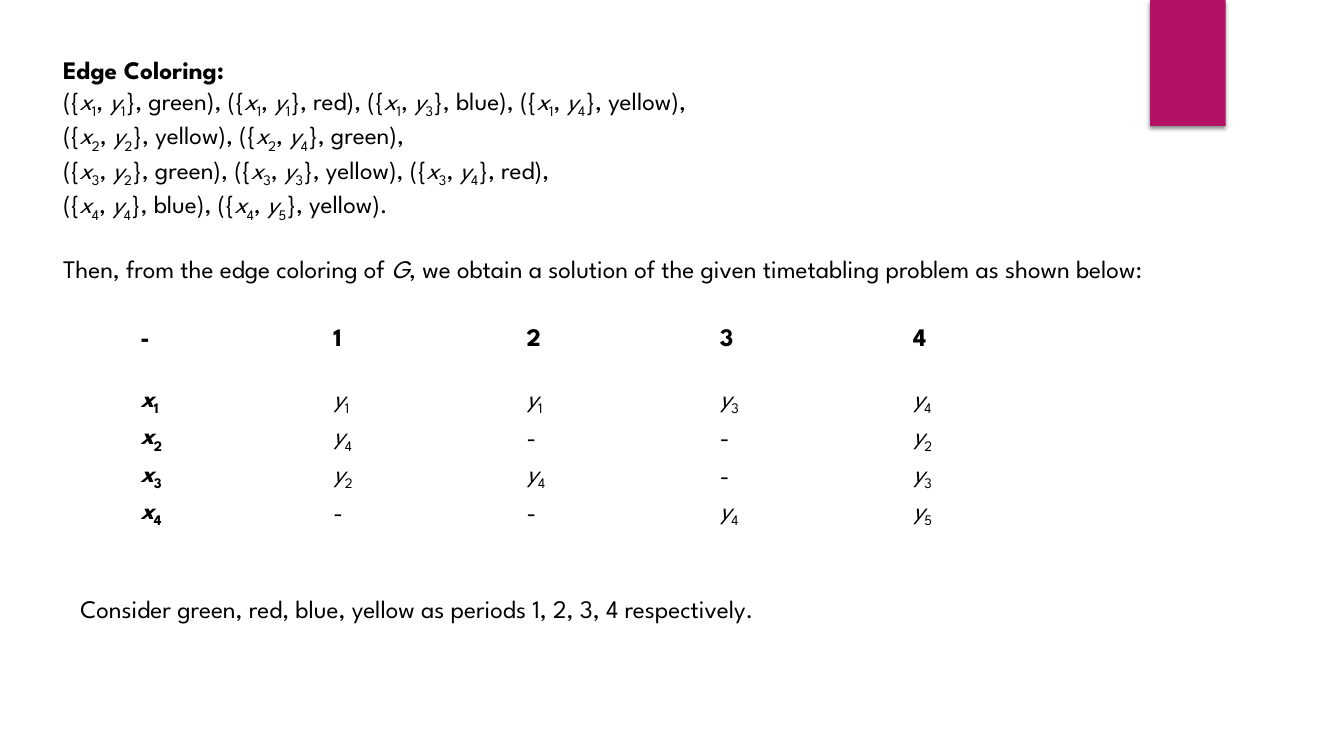
"""Build the edge coloring slide with its timetable."""
from itertools import cycle

from lxml import etree
from pptx import Presentation
from pptx.dml.color import RGBColor
from pptx.enum import shapes, text
from pptx.oxml import ns
from pptx.util import Pt

BLACK = RGBColor(0, 0, 0)
WHITE = RGBColor(255, 255, 255)
MAGENTA = RGBColor(0xB3, 0x11, 0x66)

PERIODS = ["green", "red", "blue", "yellow"]
COLORING = {
    1: [(1, "green"), (1, "red"), (3, "blue"), (4, "yellow")],
    2: [(2, "yellow"), (4, "green")],
    3: [(2, "green"), (3, "yellow"), (4, "red")],
    4: [(4, "blue"), (5, "yellow")],
}


class SlideBuilder:
    """Adds styled elements to one slide, with lengths in points."""

    font_name = "League Spartan"
    font_size = 18

    def __init__(self, slide):
        self.slide = slide

    def add_runs(self, paragraph, markup, bold=False):
        """Set parts split by bars as roman, italic, subscript in turn."""
        for part, kind in zip(markup.split("|"), cycle(("roman", "italic", "sub"))):
            if not part:
                continue
            run = paragraph.add_run()
            run.text = part
            run.font.name = self.font_name
            run.font.size = Pt(self.font_size)
            run.font.color.rgb = BLACK
            run.font.bold = bold
            run.font.italic = kind == "italic"
            if kind == "sub":
                run._r.get_or_add_rPr().set("baseline", "-25000")

    def place(self, shape, left, top, width, height):
        """Position a shape and prepare its text frame."""
        shape.left, shape.top = Pt(left), Pt(top)
        shape.width, shape.height = Pt(width), Pt(height)
        frame = shape.text_frame
        frame.word_wrap = True
        frame.auto_size = text.MSO_AUTO_SIZE.NONE
        frame.vertical_anchor = text.MSO_ANCHOR.TOP
        frame.margin_left = frame.margin_right = 0
        frame.margin_top = frame.margin_bottom = 0
        return frame

    def title(self, markup, *box):
        """Fill the title placeholder."""
        paragraph = self.place(self.slide.shapes.title, *box).paragraphs[0]
        paragraph.alignment = text.PP_ALIGN.LEFT
        self.add_runs(paragraph, markup, bold=True)

    def body(self, lines, closing, gap, *box):
        """Fill the body placeholder with lines and a spaced closing line."""
        frame = self.place(self.slide.placeholders[1], *box)
        for index, line in enumerate([*lines, closing]):
            paragraph = frame.add_paragraph() if index else frame.paragraphs[0]
            properties = paragraph._p.get_or_add_pPr()
            properties.set("marL", "0")
            properties.set("indent", "0")
            etree.SubElement(properties, ns.qn("a:buNone"))
            paragraph.space_before = Pt(gap if index == len(lines) else 0)
            self.add_runs(paragraph, line)

    def note(self, markup, *box):
        """Add a text box with one line."""
        note = self.slide.shapes.add_textbox(0, 0, 0, 0)
        self.add_runs(self.place(note, *box).paragraphs[0], markup)

    def ribbon(self, left, top, width, height):
        """Add the accent bar with its soft shadow."""
        ribbon = self.slide.shapes.add_shape(
            shapes.MSO_SHAPE.RECTANGLE, Pt(left), Pt(top), Pt(width), Pt(height))
        ribbon.fill.solid()
        ribbon.fill.fore_color.rgb = MAGENTA
        ribbon.line.fill.background()
        ribbon.shadow.inherit = False
        effects = ribbon._element.spPr.find(ns.qn("a:effectLst"))
        shadow = etree.SubElement(effects, ns.qn("a:outerShdw"), blurRad=str(Pt(3)),
                                  dist=str(Pt(2)), dir="5400000", rotWithShape="0")
        color = etree.SubElement(shadow, ns.qn("a:srgbClr"), val="000000")
        etree.SubElement(color, ns.qn("a:alpha"), val="45000")

    def timetable(self, rows, left, top, column_width, header_height, row_height):
        """Add a plain table with a bold first row and column."""
        width = column_width * len(rows[0])
        height = header_height + row_height * (len(rows) - 1)
        table = self.slide.shapes.add_table(
            len(rows), len(rows[0]), Pt(left), Pt(top), Pt(width), Pt(height)).table
        table.first_row = table.horz_banding = False
        for column in table.columns:
            column.width = Pt(column_width)
        for r, row in enumerate(rows):
            table.rows[r].height = Pt(row_height if r else header_height)
            for c, markup in enumerate(row):
                cell = table.cell(r, c)
                cell.fill.solid()
                cell.fill.fore_color.rgb = WHITE
                cell.vertical_anchor = text.MSO_ANCHOR.MIDDLE
                self.add_runs(cell.text_frame.paragraphs[0], markup, bold=r == 0 or c == 0)


def coloring_lines():
    """List the colored edges, one line for each x."""
    lines = [", ".join(f"({{|x|{x}|, |y|{y}|}}, {color})" for y, color in edges)
             for x, edges in COLORING.items()]
    return [line + "," for line in lines[:-1]] + [lines[-1] + "."]


def timetable_rows():
    """Arrange the colored edges by period."""
    rows = [["-", *(str(n) for n in range(1, len(PERIODS) + 1))]]
    for x, edges in COLORING.items():
        lessons = {color: f"|y|{y}" for y, color in edges}
        rows.append([f"|x|{x}", *(lessons.get(period, "-") for period in PERIODS)])
    return rows


def main():
    """Build and save the slide."""
    deck = Presentation()
    deck.slide_width, deck.slide_height = Pt(960), Pt(540)
    builder = SlideBuilder(deck.slides.add_slide(deck.slide_layouts[1]))
    builder.ribbon(821.5, 0, 54, 90)
    builder.title("Edge Coloring:", 45, 39, 780, 22)
    builder.body(
        coloring_lines(),
        "Then, from the edge coloring of |G||, we obtain a solution of the given "
        "timetabling problem as shown below:",
        22, 45, 61, 780, 152)
    builder.timetable(timetable_rows(), 93, 211.5, 138, 63.5, 25)
    builder.note("Consider green, red, blue, yellow as periods 1, 2, 3, 4 respectively.",
                 57.5, 424, 772, 22)
    deck.save("out.pptx")


if __name__ == "__main__":
    main()
